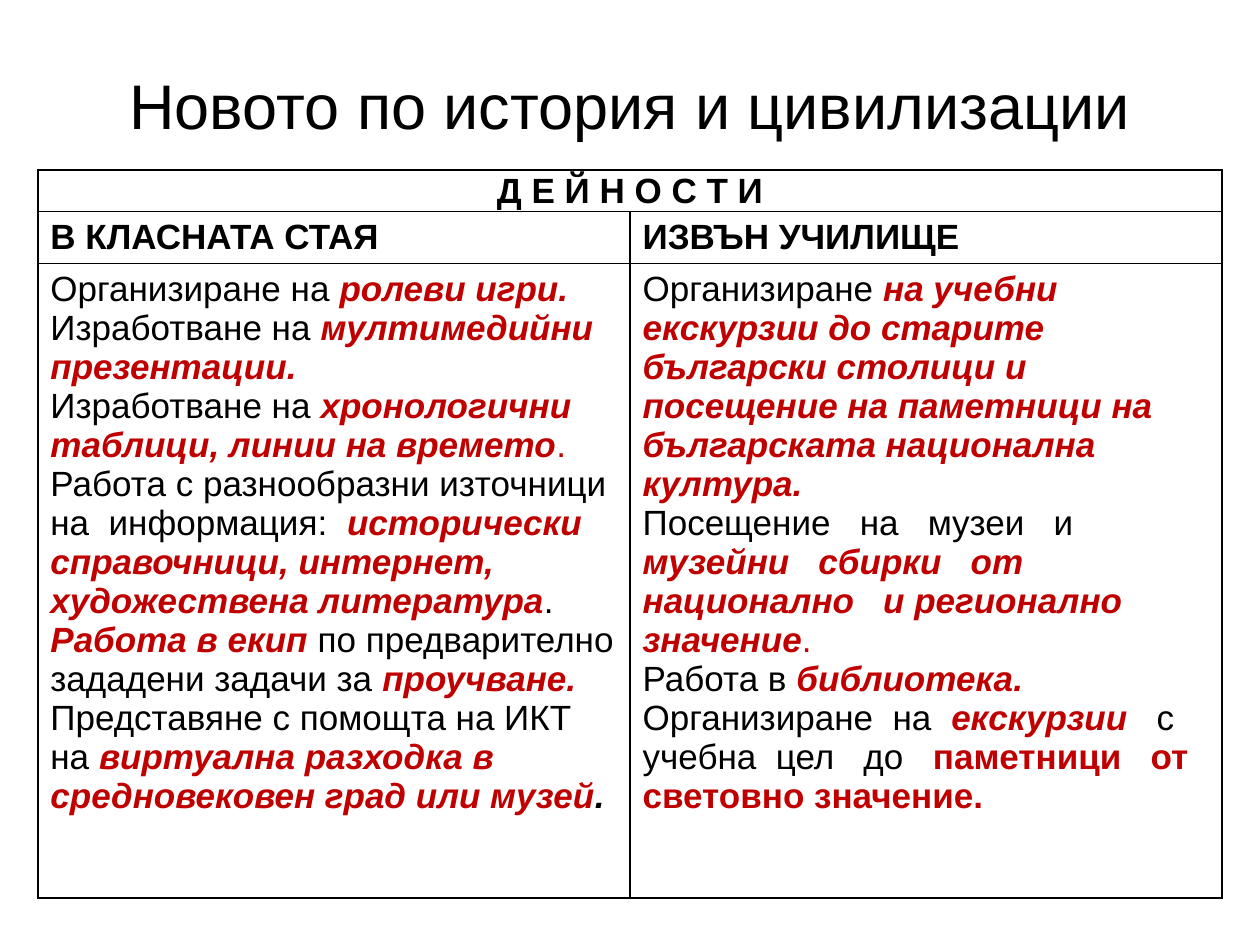
from dataclasses import dataclass

from lxml.etree import SubElement
from pptx import Presentation
from pptx.dml.color import RGBColor
from pptx.enum.text import MSO_ANCHOR as Anchor, PP_ALIGN as Align
from pptx.oxml.ns import qn
from pptx.util import Inches, Pt


@dataclass(frozen=True)
class Theme:
    font: str = "Arial"
    ink: str = "000000"
    accent: str = "C00000"
    title_size: int = 36
    table_size: int = 20
    border: int = 1


# Run styles: (accent colour, bold, italic)
PLAIN = (False, False, False)
HEAD = (False, True, False)
KEY = (True, True, True)
KEY_UPRIGHT = (True, True, False)
RED = (True, False, False)
INK_KEY = (False, True, True)

# Content: each cell is a list of paragraphs, each paragraph a list of runs
HEADING = [[("Д Е Й Н О С Т И", HEAD)]]
COLUMN_HEADS = [[[(name, HEAD)]] for name in ("В КЛАСНАТА СТАЯ", "ИЗВЪН УЧИЛИЩЕ")]
IN_CLASS = [
    [("Организиране на ", PLAIN), ("ролеви игри.", KEY)],
    [("Изработване на ", PLAIN), ("мултимедийни презентации.", KEY)],
    [("Изработване на ", PLAIN),
     ("хронологични таблици, линии на времето", KEY), (".", RED)],
    [("Работа с разнообразни източници  на  информация:  ", PLAIN),
     ("исторически справочници, интернет, художествена литература", KEY),
     (".", PLAIN)],
    [("Работа в екип ", KEY), ("по предварително зададени задачи за ", PLAIN),
     ("проучване.", KEY)],
    [("Представяне с помощта на ИКТ на ", PLAIN),
     ("виртуална разходка в средновековен град или музей", KEY),
     (".", INK_KEY)],
]
OUT_OF_SCHOOL = [
    [("Организиране ", PLAIN),
     ("на учебни екскурзии до старите български столици и посещение на "
      "паметници на българската национална култура.", KEY)],
    [("Посещение   на   музеи   и   ", PLAIN),
     ("музейни   сбирки   от   национално   и регионално значение", KEY),
     (".", RED)],
    [("Работа в ", PLAIN), ("библиотека.", KEY)],
    [("Организиране  на  ", PLAIN), ("екскурзии ", KEY),
     ("  с   учебна  цел   до   ", PLAIN),
     ("паметници   от световно значение.", KEY_UPRIGHT)],
]


class SlideBuilder:
    def __init__(self, deck, theme):
        self.deck = deck
        self.theme = theme
        self.slide = deck.slides.add_slide(deck.slide_layouts[5])

    def box(self, left, top, width, height):
        """Turn shares of the slide's size into lengths."""
        across, down = self.deck.slide_width, self.deck.slide_height
        return (int(left * across), int(top * down),
                int(width * across), int(height * down))

    def add_run(self, paragraph, text, style, size):
        accent, bold, italic = style
        run = paragraph.add_run()
        run.text = text
        font = run.font
        font.name, font.size = self.theme.font, Pt(size)
        font.bold, font.italic = bold, italic
        font.color.rgb = RGBColor.from_string(
            self.theme.accent if accent else self.theme.ink)

    def title(self, text, area):
        heading = self.slide.shapes.title
        heading.left, heading.top, heading.width, heading.height = self.box(*area)
        frame = heading.text_frame
        frame.vertical_anchor = Anchor.MIDDLE
        frame.paragraphs[0].alignment = Align.CENTER
        self.add_run(frame.paragraphs[0], text, PLAIN, self.theme.title_size)

    def table(self, area, row_shares, columns):
        grid = self.slide.shapes.add_table(
            len(row_shares), columns, *self.box(*area)).table
        grid.first_row = grid.horz_banding = False
        height = area[3] * self.deck.slide_height
        for row, share in zip(grid.rows, row_shares):
            row.height = int(height * share / sum(row_shares))
        for cell in grid.iter_cells():
            cell.fill.background()
            self.outline(cell)
        return grid

    def outline(self, cell):
        properties = cell._tc.get_or_add_tcPr()
        for place, side in enumerate(("lnL", "lnR", "lnT", "lnB")):
            line = SubElement(properties, qn(f"a:{side}"),
                              w=str(Pt(self.theme.border)))
            fill = SubElement(line, qn("a:solidFill"))
            SubElement(fill, qn("a:srgbClr"), val=self.theme.ink)
            properties.insert(place, line)

    def fill_cell(self, cell, paragraphs, align=Align.LEFT):
        frame = cell.text_frame
        for index, runs in enumerate(paragraphs):
            paragraph = frame.add_paragraph() if index else frame.paragraphs[0]
            paragraph.alignment = align
            for text, style in runs:
                self.add_run(paragraph, text, style, self.theme.table_size)


def main():
    deck = Presentation()
    deck.slide_width, deck.slide_height = Inches(10), Inches(7.5)
    builder = SlideBuilder(deck, Theme())

    # Title
    builder.title("Новото по история и цивилизации", (0.05, 0.04, 0.9, 0.14))

    # Activities table: one heading above two columns
    activities = builder.table((0.03, 0.18, 0.94, 0.77), (0.33, 0.41, 5.04), 2)
    heading = activities.cell(0, 0)
    heading.merge(activities.cell(0, 1))
    heading.vertical_anchor = Anchor.MIDDLE
    heading.margin_left = heading.margin_right = Inches(0.07)
    heading.margin_top = heading.margin_bottom = 0
    builder.fill_cell(heading, HEADING, Align.CENTER)

    # Column heads and their lists
    for row, contents in enumerate((COLUMN_HEADS, (IN_CLASS, OUT_OF_SCHOOL)), 1):
        for column, paragraphs in enumerate(contents):
            builder.fill_cell(activities.cell(row, column), paragraphs)

    deck.save("out.pptx")


if __name__ == "__main__":
    main()
